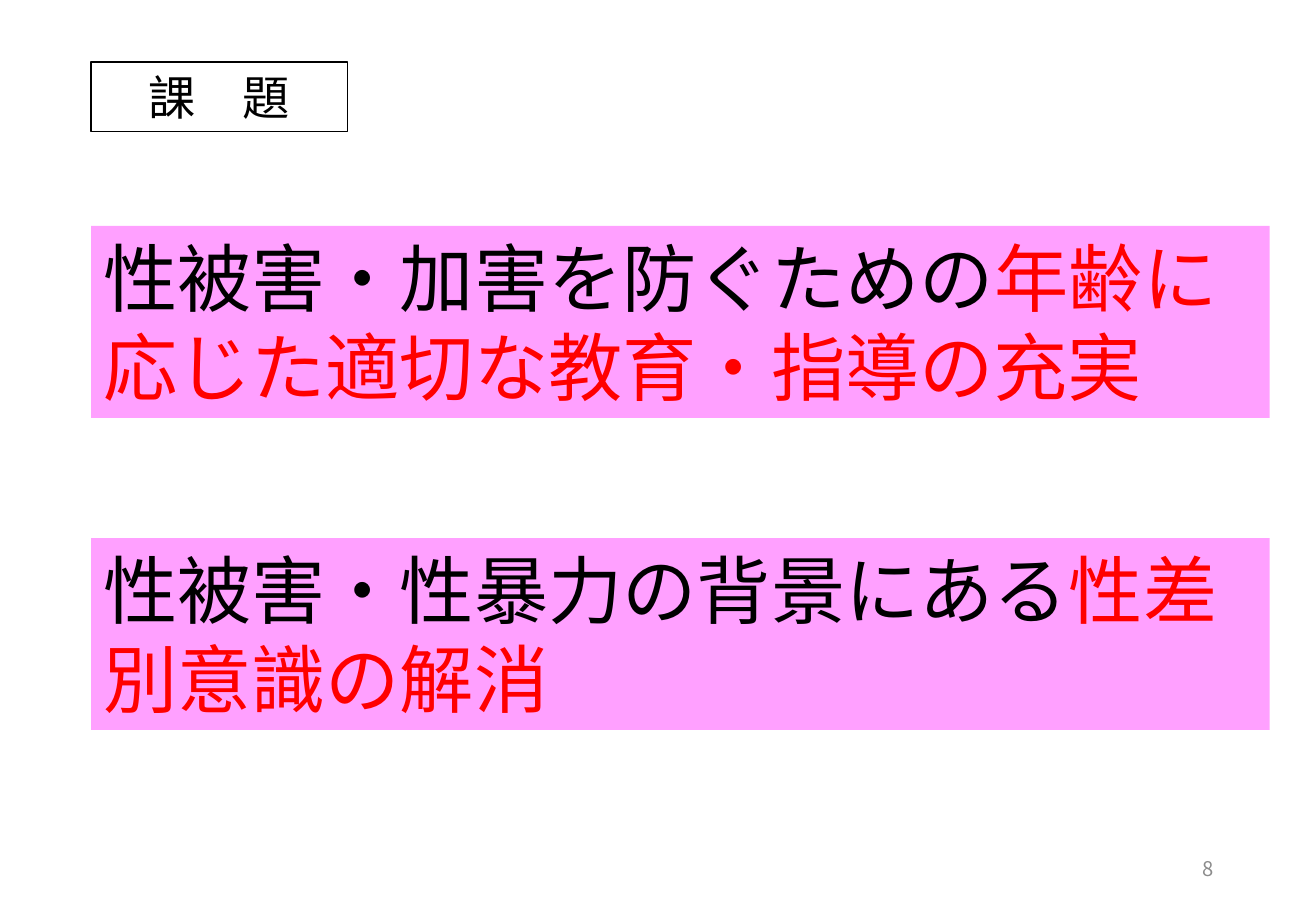
from dataclasses import dataclass

import pptx
import pptx.dml.color
import pptx.enum.text
import pptx.oxml
import pptx.oxml.ns
import pptx.shapes.base
import pptx.slide
import pptx.text.text
import pptx.util

Pt = pptx.util.Pt
RGB = pptx.dml.color.RGBColor
Align = pptx.enum.text.PP_ALIGN
Anchor = pptx.enum.text.MSO_ANCHOR


@dataclass(frozen=True)
class Theme:
    font: str = "Noto Sans CJK JP"
    text: RGB = RGB(0, 0, 0)
    emphasis: RGB = RGB(0xFF, 0, 0)
    muted: RGB = RGB(0x8C, 0x8C, 0x8C)
    paper: RGB = RGB(0xFF, 0xFF, 0xFF)
    panel: RGB = RGB(0xFF, 0xA0, 0xFF)
    heading_size: float = 28
    issue_size: float = 44
    number_size: float = 12


@dataclass(frozen=True)
class Box:
    left: float
    top: float
    width: float
    height: float


@dataclass(frozen=True)
class Issue:
    top: float
    context: str
    goal: str


THEME = Theme()
MARGIN = 54
HEADING_BOX = Box(MARGIN, 36.72, 151.92, 41.2)
NUMBER_BOX = Box(550.8, 500.4, 175.68, 28.8)
ISSUE_WIDTH, ISSUE_HEIGHT = 698.6, 113.76
ISSUES = (
    Issue(133.92, "性被害・加害を防ぐための", "年齢に応じた適切な教育・指導の充実"),
    Issue(318.96, "性被害・性暴力の背景にある", "性差別意識の解消"),
)


def add_run(paragraph: pptx.text.text._Paragraph, text: str, size: float, color: RGB) -> None:
    """Add a run whose font covers both Latin and East Asian characters."""
    run = paragraph.add_run()
    run.text = text
    run.font.size = Pt(size)
    run.font.color.rgb = color
    run.font.name = THEME.font
    east_asian = pptx.oxml.parse_xml(
        f'<a:ea {pptx.oxml.ns.nsdecls("a")} typeface="{THEME.font}"/>')
    run.font._element.append(east_asian)


def place(shape: pptx.shapes.base.BaseShape, box: Box) -> None:
    shape.left, shape.top = Pt(box.left), Pt(box.top)
    shape.width, shape.height = Pt(box.width), Pt(box.height)


def add_text_box(slide: pptx.slide.Slide, box: Box) -> pptx.shapes.base.BaseShape:
    shape = slide.shapes.add_textbox(Pt(box.left), Pt(box.top), Pt(box.width), Pt(box.height))
    shape.text_frame.word_wrap = True
    return shape


def add_heading(slide: pptx.slide.Slide, text: str) -> None:
    heading = slide.shapes.title
    place(heading, HEADING_BOX)
    heading.fill.solid()
    heading.fill.fore_color.rgb = THEME.paper
    heading.line.color.rgb = THEME.text
    heading.line.width = Pt(1)
    frame = heading.text_frame
    frame.auto_size = pptx.enum.text.MSO_AUTO_SIZE.NONE
    frame.vertical_anchor = Anchor.MIDDLE
    frame.paragraphs[0].alignment = Align.CENTER
    add_run(frame.paragraphs[0], text, THEME.heading_size, THEME.text)


def add_issue(slide: pptx.slide.Slide, issue: Issue) -> None:
    panel = add_text_box(slide, Box(MARGIN, issue.top, ISSUE_WIDTH, ISSUE_HEIGHT))
    panel.fill.solid()
    panel.fill.fore_color.rgb = THEME.panel
    statement = panel.text_frame.paragraphs[0]
    add_run(statement, issue.context, THEME.issue_size, THEME.text)
    add_run(statement, issue.goal, THEME.issue_size, THEME.emphasis)


def add_page_number(slide: pptx.slide.Slide, number: str) -> None:
    frame = add_text_box(slide, NUMBER_BOX).text_frame
    frame.vertical_anchor = Anchor.MIDDLE
    frame.paragraphs[0].alignment = Align.RIGHT
    add_run(frame.paragraphs[0], number, THEME.number_size, THEME.muted)


def main() -> None:
    deck = pptx.Presentation()
    deck.slide_width, deck.slide_height = Pt(780), Pt(540)
    slide = deck.slides.add_slide(deck.slide_layouts.get_by_name("Title Only"))
    add_heading(slide, "課　題")
    for issue in ISSUES:
        add_issue(slide, issue)
    add_page_number(slide, "8")
    deck.save("out.pptx")


if __name__ == "__main__":
    main()
